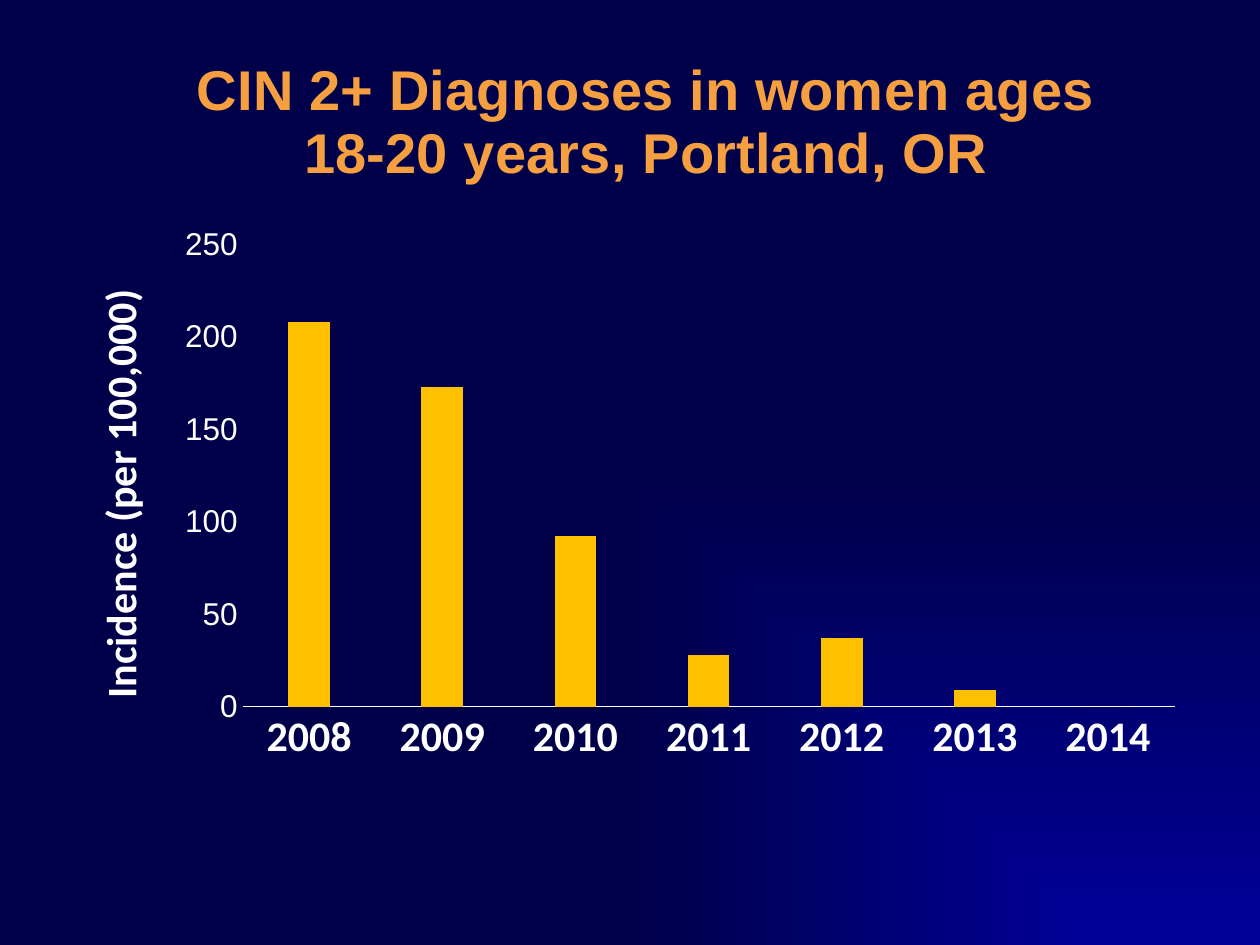
from lxml import etree
from pptx import Presentation
from pptx.chart.data import CategoryChartData
from pptx.dml.color import RGBColor
from pptx.enum import chart as kinds
from pptx.oxml.ns import qn
from pptx.util import Cm, Pt

COLORS = {"title": "F59F41", "text": "FFFFFF", "bar": "FFC000",
          "glow": "000099", "navy": "00004A"}
INCIDENCE = {"2008": 208, "2009": 173, "2010": 92, "2011": 28,
             "2012": 37, "2013": 9, "2014": 0}
CHART_WIDTH, CHART_HEIGHT = Cm(22.86), Cm(14.6)


def style(font, size, color="text", name="Arial", bold=False):
    font.size, font.name, font.bold = Pt(size), name, bold
    font.color.rgb = RGBColor.from_string(COLORS[color])


def place(element, index, **lengths):
    """Pin a chart part at lengths in centimetres within the chart."""
    for old in element.findall(qn("c:layout")):
        element.remove(old)
    layout = etree.Element(qn("c:layout"))
    manual = etree.SubElement(layout, qn("c:manualLayout"))
    if "w" in lengths:
        etree.SubElement(manual, qn("c:layoutTarget"), val="inner")
    for key in "xy":
        etree.SubElement(manual, qn(f"c:{key}Mode"), val="edge")
    for key, length in lengths.items():
        whole = CHART_WIDTH if key in "xw" else CHART_HEIGHT
        etree.SubElement(manual, qn(f"c:{key}"), val=str(Cm(length) / whole))
    element.insert(index, layout)


deck = Presentation()
deck.slide_width, deck.slide_height = Cm(25.4), Cm(19.05)
page = deck.slides.add_slide(deck.slide_layouts[6])

# Background glowing from the lower right corner
fill = page.background.fill
fill.gradient()
for stop, color in zip(fill.gradient_stops, ("glow", "navy")):
    stop.color.rgb = RGBColor.from_string(COLORS[color])
gradient = page.element.find(".//" + qn("a:gradFill"))
gradient.remove(gradient.find(qn("a:lin")))
rect = etree.SubElement(gradient, qn("a:path"))
rect.set("path", "rect")
etree.SubElement(rect, qn("a:fillToRect"), l="100000", t="100000")

# Column chart
data = CategoryChartData()
data.categories = list(INCIDENCE)
data.add_series("Series 1", list(INCIDENCE.values()))
chart = page.shapes.add_chart(
    kinds.XL_CHART_TYPE.COLUMN_CLUSTERED,
    Cm(1.27), Cm(1.07), CHART_WIDTH, CHART_HEIGHT, data).chart
style(chart.font, 10)
chart.has_legend = False

plot = chart.plots[0]
plot.gap_width, plot.overlap, plot.vary_by_categories = 219, -27, False
bars = plot.series[0].format.fill
bars.solid()
bars.fore_color.rgb = RGBColor.from_string(COLORS["bar"])

years, rates = chart.category_axis, chart.value_axis
for axis in (years, rates):
    axis.has_major_gridlines = False
    axis.major_tick_mark = axis.minor_tick_mark = kinds.XL_TICK_MARK.NONE
style(years.tick_labels.font, 24, name="Calibri", bold=True)
years.format.line.color.rgb = RGBColor.from_string(COLORS["text"])
years.format.line.width = Pt(0.75)
style(rates.tick_labels.font, 18)
rates.format.line.fill.background()
rates.minimum_scale, rates.maximum_scale, rates.major_unit = 0, 250, 50

# Titles
chart.has_title = rates.has_title = True
for title, lines, look in (
        (chart.chart_title,
         ["CIN 2+ Diagnoses in women ages", "18-20 years, Portland, OR"],
         {"size": 32, "color": "title", "bold": True}),
        (rates.axis_title, ["Incidence (per 100,000)"],
         {"size": 24, "name": "Calibri", "bold": True})):
    frame = title.text_frame
    for number, line in enumerate(lines):
        para = frame.add_paragraph() if number else frame.paragraphs[0]
        span = para.add_run()
        span.text = line
        style(para.font, **look)
        style(span.font, **look)

place(chart.chart_title.element, 1, x=2.62, y=0)
place(rates.axis_title.element, 1, x=0.43, y=4.62)
place(chart.element.find(".//" + qn("c:plotArea")), 0,
      x=3.62, y=3.85, w=18.79, h=9.33)

deck.save("out.pptx")
